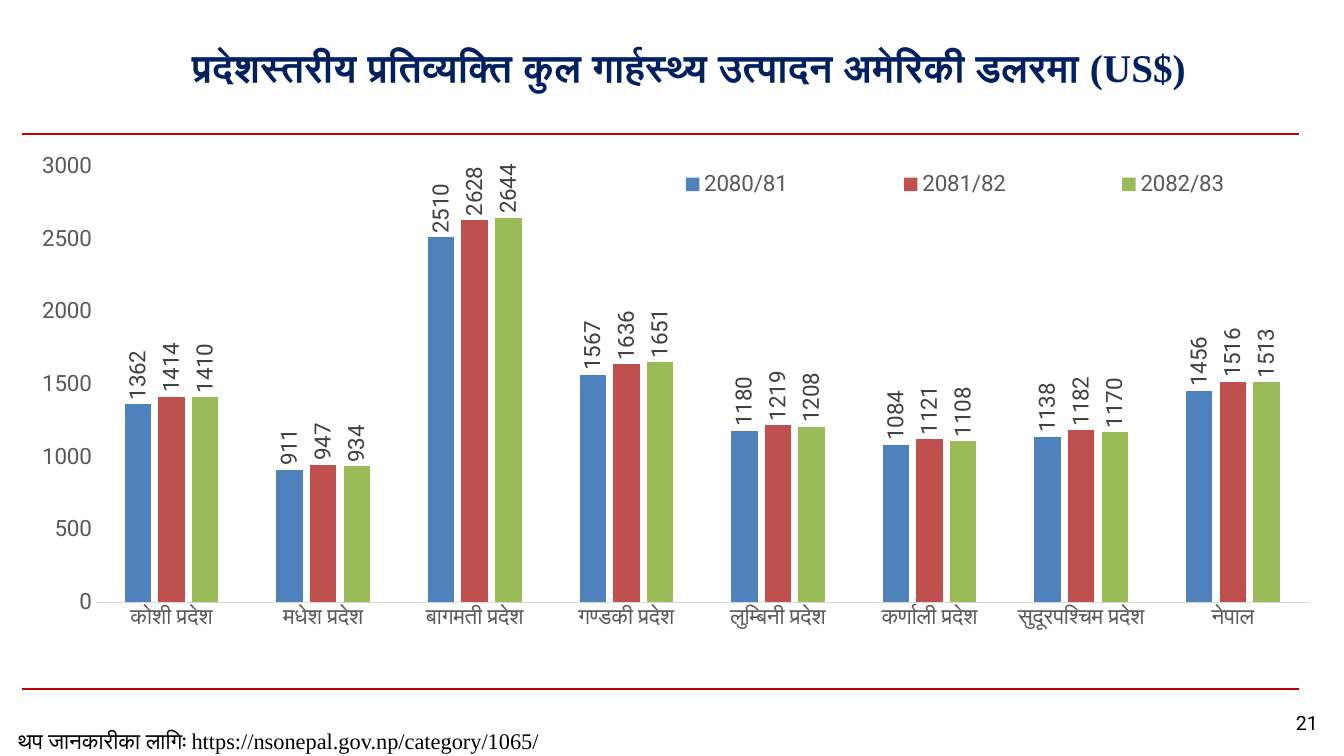
import pptx
import pptx.chart.data
import pptx.dml.color
import pptx.enum.chart
import pptx.enum.shapes
import pptx.enum.text
import pptx.oxml
import pptx.oxml.ns
import pptx.util
import lxml.etree

THEME = {
    "title": "002060", "rule": "C00000", "text": "000000", "axis_text": "595959",
    "axis_line": "D9D9D9", "label": "404040",
    "series": ["4F81BD", "C0504D", "9BBB59"],
    "title_size": 28, "number_size": 14, "body_size": 16,
    "serif": "Times New Roman", "sans": "Roboto", "category": "Calibri",
}
COLUMNS, ROWS = 160, 90
CELL = pptx.util.Inches(1 / 12)
CHART_LEFT, CHART_TOP, CHART_WIDTH, CHART_HEIGHT = 1.9, 17, 157.1, 64


def style_font(font, size, color, name, bold=False):
    font.size = pptx.util.Pt(THEME[size])
    font.color.rgb = pptx.dml.color.RGBColor.from_string(THEME[color])
    font.name = THEME[name]
    font.bold = bold


def place_in_chart(element, position, left, top, width, height, inner=False):
    for old_layout in element.findall(pptx.oxml.ns.qn("c:layout")):
        element.remove(old_layout)
    layout = lxml.etree.Element(pptx.oxml.ns.qn("c:layout"))
    manual = lxml.etree.SubElement(layout, pptx.oxml.ns.qn("c:manualLayout"))
    settings = [("layoutTarget", "inner")] if inner else []
    settings += [("xMode", "edge"), ("yMode", "edge"),
                 ("x", left / CHART_WIDTH), ("y", top / CHART_HEIGHT),
                 ("w", width / CHART_WIDTH), ("h", height / CHART_HEIGHT)]
    for tag, value in settings:
        lxml.etree.SubElement(manual, pptx.oxml.ns.qn("c:" + tag)).set("val", str(value))
    element.insert(position, layout)


presentation = pptx.Presentation()
presentation.slide_width = int(COLUMNS * CELL)
presentation.slide_height = int(ROWS * CELL)
slide = presentation.slides.add_slide(presentation.slide_layouts[6])

for row in (16, 82):
    rule = slide.shapes.add_connector(
        pptx.enum.shapes.MSO_CONNECTOR.STRAIGHT,
        int(2.6 * CELL), int(row * CELL), int(154.7 * CELL), int(row * CELL))
    rule.line.color.rgb = pptx.dml.color.RGBColor.from_string(THEME["rule"])
    rule.line.width = pptx.util.Pt(1.5)
    lxml.etree.SubElement(rule._element.spPr, pptx.oxml.ns.qn("a:effectLst"))

center, left = pptx.enum.text.PP_ALIGN.CENTER, pptx.enum.text.PP_ALIGN.LEFT
middle, top = pptx.enum.text.MSO_ANCHOR.MIDDLE, pptx.enum.text.MSO_ANCHOR.TOP
texts = [
    ("प्रदेशस्तरीय प्रतिव्यक्ति कुल गार्हस्थ्य उत्पादन अमेरिकी डलरमा (US$)",
     (16, 3, 132, 9.2), center, middle, 1.14, ("title_size", "title", "serif", True)),
    ("21", (152, 84, 7.2, 4), center, top, 1.0, ("number_size", "text", "sans")),
    ("थप जानकारीका लागिः https://nsonepal.gov.np/category/1065/",
     (1, 86, 74, 4), left, top, 1.0, ("body_size", "text", "serif")),
]
for wording, box, alignment, anchor, spacing, style in texts:
    shape = slide.shapes.add_textbox(*[int(length * CELL) for length in box])
    shape.text_frame.word_wrap = True
    shape.text_frame.vertical_anchor = anchor
    paragraph = shape.text_frame.paragraphs[0]
    paragraph.alignment = alignment
    paragraph.line_spacing = spacing
    run = paragraph.add_run()
    run.text = wording
    style_font(run.font, *style)

chart_data = pptx.chart.data.CategoryChartData(number_format="0")
chart_data.categories = [
    "कोशी प्रदेश", "मधेश प्रदेश", "बागमती प्रदेश", "गण्डकी प्रदेश",
    "लुम्बिनी प्रदेश", "कर्णाली प्रदेश", "सुदूरपश्चिम प्रदेश", "नेपाल"]
chart_data.add_series("2080/81", [1362, 911, 2510, 1567, 1180, 1084, 1138, 1456])
chart_data.add_series("2081/82", [1414, 947, 2628, 1636, 1219, 1121, 1182, 1516])
chart_data.add_series("2082/83", [1410, 934, 2644, 1651, 1208, 1108, 1170, 1513])
chart_box = (CHART_LEFT, CHART_TOP, CHART_WIDTH, CHART_HEIGHT)
chart = slide.shapes.add_chart(
    pptx.enum.chart.XL_CHART_TYPE.COLUMN_CLUSTERED,
    *[int(length * CELL) for length in chart_box], chart_data).chart
chart.has_title = False
style_font(chart.font, "body_size", "text", "category")

category_axis, value_axis = chart.category_axis, chart.value_axis
for axis, font_name in ((category_axis, "category"), (value_axis, "sans")):
    axis.has_major_gridlines = False
    axis.major_tick_mark = pptx.enum.chart.XL_TICK_MARK.NONE
    axis.minor_tick_mark = pptx.enum.chart.XL_TICK_MARK.NONE
    style_font(axis.tick_labels.font, "body_size", "axis_text", font_name)
category_axis.format.line.color.rgb = pptx.dml.color.RGBColor.from_string(THEME["axis_line"])
category_axis.format.line.width = pptx.util.Pt(0.75)
value_axis.format.line.fill.background()
value_axis.minimum_scale, value_axis.maximum_scale = 0, 3000
value_axis.major_unit = 500
value_axis.tick_labels.number_format = "0"
value_axis.tick_labels.number_format_is_linked = False

plot = chart.plots[0]
plot.gap_width, plot.overlap = 219, -27
plot.vary_by_categories = False
for series, color in zip(plot.series, THEME["series"]):
    series.format.fill.solid()
    series.format.fill.fore_color.rgb = pptx.dml.color.RGBColor.from_string(color)
    series.invert_if_negative = False
    labels = series.data_labels
    labels.show_value = True
    labels.number_format = "0"
    labels.number_format_is_linked = False
    labels.position = pptx.enum.chart.XL_LABEL_POSITION.OUTSIDE_END
    style_font(labels.font, "body_size", "label", "sans")
    label_body = labels._element.find(".//" + pptx.oxml.ns.qn("a:bodyPr"))
    label_body.set("rot", "-5400000")
    label_body.set("vert", "horz")

chart.has_legend = True
chart.legend.position = pptx.enum.chart.XL_LEGEND_POSITION.BOTTOM
chart.legend.include_in_layout = False
style_font(chart.legend.font, "body_size", "axis_text", "sans")
place_in_chart(chart.legend._element, 1, 66.8, 2.4, 90, 5.1)
plot_area = chart._chartSpace.find(".//" + pptx.oxml.ns.qn("c:plotArea"))
place_in_chart(plot_area, 0, 9.5, 2.8, 144.4, 51.9, inner=True)

presentation.save("out.pptx")
